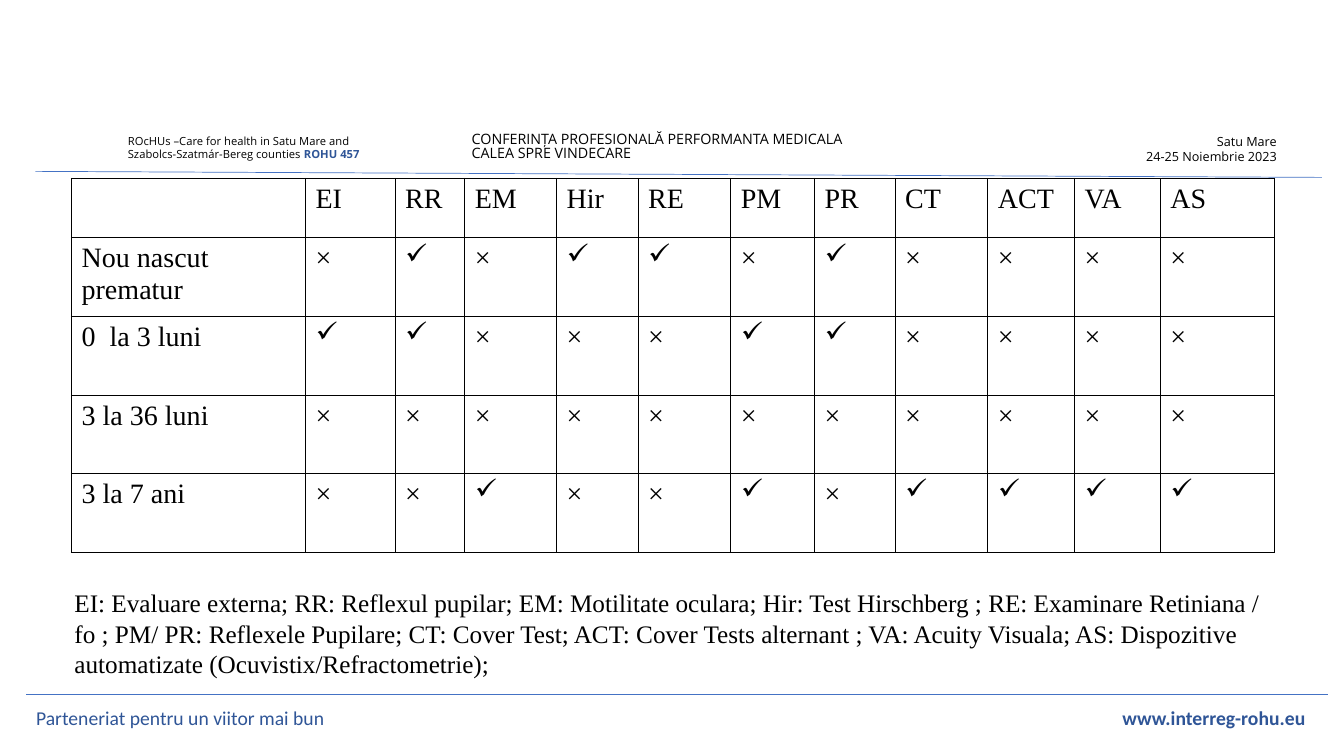
from lxml import etree
from pptx import Presentation
from pptx import util as u
from pptx.dml.color import RGBColor
from pptx.enum import shapes, text
from pptx.oxml import ns

THEME = {
    "ink": "000000", "accent": "2F5597", "rule": "4472C4",
    "header_font": "Open Sans", "footer_font": "Calibri", "body_font": "Times New Roman",
    "check_font": "Wingdings",
    "title": 10.2, "date": 9, "project": 8, "footer": 14, "table": 20, "legend": 18,
    "rule_width": 0.5, "border_width": 1,
}
LEFT, RIGHT = text.PP_ALIGN.LEFT, text.PP_ALIGN.RIGHT

HEADERS = [
    ((4.58, 1.28, 5.7, 0.4), "title", LEFT, 0.8,
     [["CONFERINȚA PROFESIONALĂ PERFORMANTA MEDICALA"], ["CALEA SPRE VINDECARE"]]),
    ((10.54, 1.28, 2.22, 0.4), "date", RIGHT, 1.0,
     [["Satu Mare"], ["24-25 Noiembrie 2023"]]),
    ((1.17, 1.28, 3.4, 0.37), "project", LEFT, 1.0,
     [["ROcHUs –Care for health in Satu Mare and"],
      ["Szabolcs-Szatmár-Bereg counties ", "ROHU 457"]]),
]
RULES = [(0.35, 1.7, 13.11, 1.76), (0.26, 6.89, 13.17, 6.89)]
FOOTER_AREA = (0.26, 6.92, 12.91, 0.4)
FOOTER = ["Parteneriat pentru un viitor mai bun\t", "www.interreg-rohu.eu"]
FOOTER_TAB = 12.59
LEGEND_AREA = (0.64, 5.78, 12.06, 1.01)
LEGEND = (
    "EI: Evaluare externa; RR: Reflexul pupilar; EM: Motilitate oculara; "
    "Hir: Test Hirschberg ; RE: Examinare Retiniana / fo ; PM/ PR: Reflexele Pupilare; "
    "CT: Cover Test; ACT: Cover Tests alternant ; VA: Acuity Visuala; "
    "AS: Dispozitive automatizate (Ocuvistix/Refractometrie);"
)
TESTS = ["EI", "RR", "EM", "Hir", "RE", "PM", "PR", "CT", "ACT", "VA", "AS"]
AGES = [
    ("Nou nascut prematur", "×✓×✓✓×✓××××"),
    ("0  la 3 luni", "✓✓×××✓✓××××"),
    ("3 la 36 luni", "×××××××××××"),
    ("3 la 7 ani", "××✓××✓×✓✓✓✓"),
]
CHECK, CHECK_BULLET, CHECK_INDENT = "✓", "ü", 0.38
TABLE_LEFT, TABLE_TOP = 0.71, 1.77
COLUMNS = [2.32, 0.89, 0.69, 0.91, 0.81, 0.92, 0.83, 0.8, 0.92, 0.86, 0.85, 1.13]
HEAD_HEIGHT, ROW_HEIGHT = 0.59, 0.78


def inches(values):
    return [u.Inches(value) for value in values]


def style(font, face, size, color):
    font.name = THEME[face]
    font.size = u.Pt(THEME[size])
    font.color.rgb = RGBColor.from_string(THEME[color])


def add_text(page, area, paragraphs, face, size, color="ink", align=LEFT, spacing=1.0):
    box = page.shapes.add_textbox(*inches(area))
    frame = box.text_frame
    frame.word_wrap = True
    for index, spans in enumerate(paragraphs):
        para = frame.paragraphs[0] if index == 0 else frame.add_paragraph()
        para.alignment = align
        para.line_spacing = spacing
        style(para.font, face, size, color)
        for position, words in enumerate(spans):
            span = para.add_run()
            span.text = words
            if position:
                style(span.font, face, size, "accent")
                span.font.bold = True
    return frame


def add_rule(page, ends):
    line = page.shapes.add_connector(shapes.MSO_CONNECTOR.STRAIGHT, *inches(ends))
    line.line.color.rgb = RGBColor.from_string(THEME["rule"])
    line.line.width = u.Pt(THEME["rule_width"])
    etree.SubElement(line._element.spPr, ns.qn("a:effectLst"))


def add_footer(page):
    frame = add_text(page, FOOTER_AREA, [FOOTER], "footer_font", "footer", "accent")
    frame.vertical_anchor = text.MSO_ANCHOR.MIDDLE
    properties = frame.paragraphs[0]._p.get_or_add_pPr()
    tabs = etree.Element(ns.qn("a:tabLst"))
    etree.SubElement(tabs, ns.qn("a:tab"), pos=str(u.Inches(FOOTER_TAB)), algn="r")
    properties.find(ns.qn("a:defRPr")).addprevious(tabs)


def add_check(para):
    properties = para._p.get_or_add_pPr()
    properties.set("marL", str(u.Inches(CHECK_INDENT)))
    properties.set("indent", str(-u.Inches(CHECK_INDENT)))
    etree.SubElement(properties, ns.qn("a:buFont"), typeface=THEME["check_font"])
    etree.SubElement(properties, ns.qn("a:buChar"), char=CHECK_BULLET)


def add_borders(cell):
    properties = cell._tc.get_or_add_tcPr()
    for index, side in enumerate(["lnL", "lnR", "lnT", "lnB"]):
        border = etree.Element(ns.qn("a:" + side), w=str(u.Pt(THEME["border_width"])))
        fill = etree.SubElement(border, ns.qn("a:solidFill"))
        etree.SubElement(fill, ns.qn("a:srgbClr"), val=THEME["ink"])
        properties.insert(index, border)


def add_screening_table(page):
    rows = [["", *TESTS]] + [[age, *marks] for age, marks in AGES]
    heights = [HEAD_HEIGHT] + [ROW_HEIGHT] * len(AGES)
    area = (TABLE_LEFT, TABLE_TOP, sum(COLUMNS), sum(heights))
    table = page.shapes.add_table(len(rows), len(COLUMNS), *inches(area)).table
    table.first_row = False
    table.horz_banding = False
    for column, width in zip(table.columns, COLUMNS):
        column.width = u.Inches(width)
    for row, height, values in zip(table.rows, heights, rows):
        row.height = u.Inches(height)
        for cell, value in zip(row.cells, values):
            para = cell.text_frame.paragraphs[0]
            if value == CHECK:
                para.text = " "
                add_check(para)
            else:
                para.text = value
            style(para.font, "body_font", "table", "ink")
            cell.fill.background()
            add_borders(cell)


def main():
    deck = Presentation()
    deck.slide_width, deck.slide_height = inches((13.33, 7.5))
    page = deck.slides.add_slide(deck.slide_layouts[6])
    for area, size, align, spacing, paragraphs in HEADERS:
        add_text(page, area, paragraphs, "header_font", size, align=align, spacing=spacing)
    for ends in RULES:
        add_rule(page, ends)
    add_footer(page)
    add_screening_table(page)
    add_text(page, LEGEND_AREA, [[LEGEND]], "body_font", "legend")
    deck.save("out.pptx")


if __name__ == "__main__":
    main()
